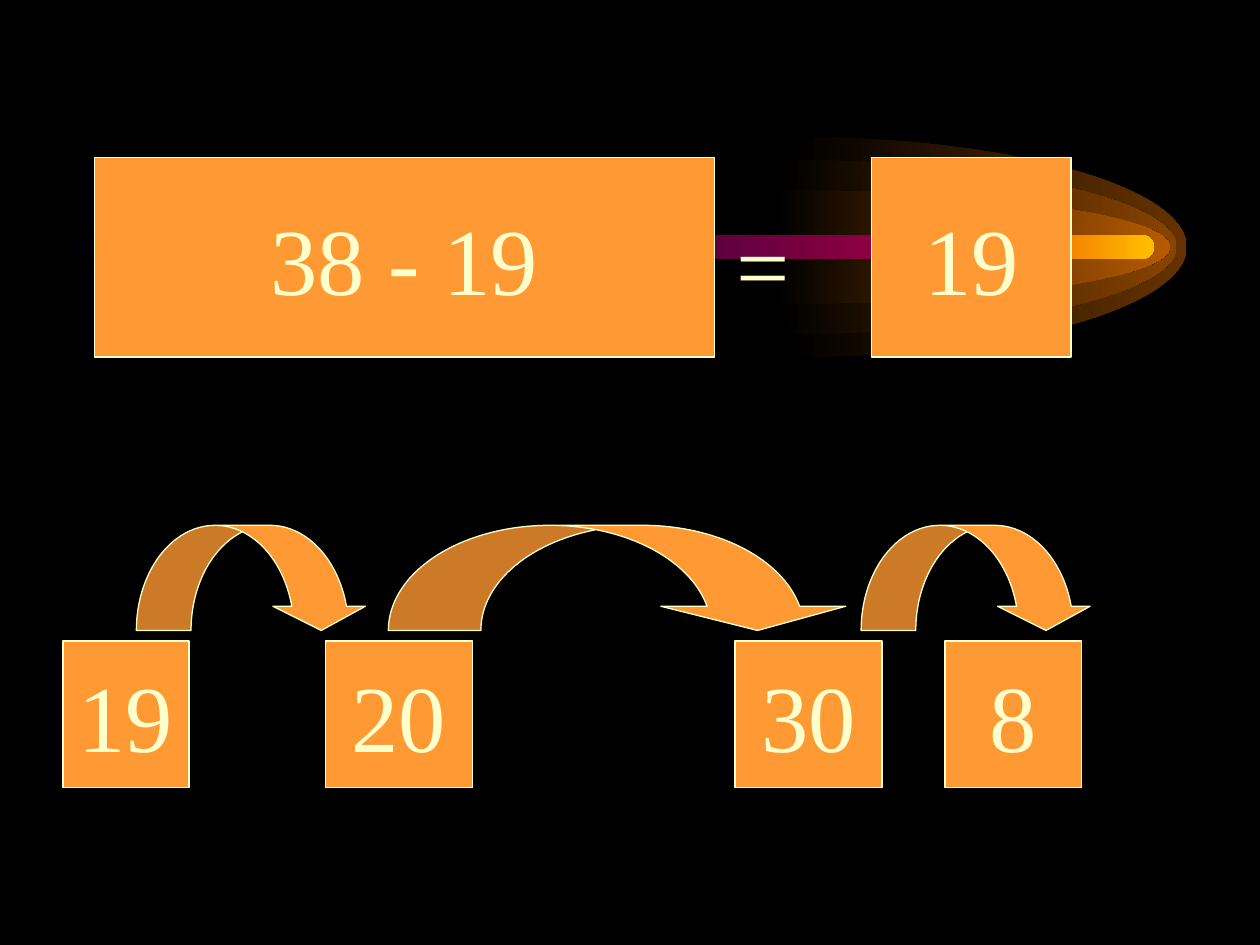
from lxml.etree import SubElement
from pptx import Presentation
from pptx.dml.color import RGBColor
from pptx.enum.shapes import MSO_SHAPE
from pptx.enum.text import MSO_ANCHOR, PP_ALIGN
from pptx.oxml.ns import qn
from pptx.util import Cm, Pt

BLACK = RGBColor(0x00, 0x00, 0x00)
ORANGE = RGBColor(0xFF, 0x99, 0x33)
CREAM = RGBColor(0xFF, 0xFF, 0xCC)
OUTER_GLOW = RGBColor(0x66, 0x33, 0x00)
MIDDLE_GLOW = RGBColor(0x89, 0x44, 0x00)
INNER_GLOW = RGBColor(0xB7, 0x5B, 0x00)
NAVY = RGBColor(0x00, 0x00, 0x40)
PURPLE = RGBColor(0x40, 0x00, 0x40)
CRIMSON = RGBColor(0x8F, 0x00, 0x40)
FLAME = RGBColor(0xF2, 0x73, 0x00)
AMBER = RGBColor(0xFF, 0xBF, 0x00)

FONT = "Times New Roman"
ROUNDNESS = 0.55


def fill_gradient(shape, stops):
    shape.shadow.inherit = False
    shape.line.fill.background()
    shape.fill.gradient()
    shape.fill.gradient_angle = 0
    stop_list = shape.element.spPr.find(qn("a:gradFill")).find(qn("a:gsLst"))
    for old_stop in list(stop_list):
        stop_list.remove(old_stop)
    for percent, color in stops:
        stop = SubElement(stop_list, qn("a:gs"), pos=str(percent * 1000))
        SubElement(stop, qn("a:srgbClr"), val=str(color))


def paint(shape):
    shape.shadow.inherit = False
    shape.fill.solid()
    shape.fill.fore_color.rgb = ORANGE
    shape.line.color.rgb = CREAM
    shape.line.width = Pt(0.75)


def write(shape, text, align):
    paragraph = shape.text_frame.paragraphs[0]
    paragraph.text = text
    paragraph.alignment = align
    font = paragraph.runs[0].font
    font.name = FONT
    font.size = Pt(54)
    font.color.rgb = CREAM


def add_number(slide, text, left, top, width, height):
    number = slide.shapes.add_shape(
        MSO_SHAPE.RECTANGLE, Cm(left), Cm(top), Cm(width), Cm(height))
    paint(number)
    number.text_frame.word_wrap = False
    number.text_frame.vertical_anchor = MSO_ANCHOR.MIDDLE
    write(number, text, PP_ALIGN.CENTER)


def add_jump(slide, left, top, width, height, shaft, head):
    jump = slide.shapes.add_shape(
        MSO_SHAPE.CURVED_DOWN_ARROW, Cm(left), Cm(top), Cm(width), Cm(height))
    paint(jump)
    for index, ratio in enumerate((shaft, head, 0.23)):
        jump.adjustments[index] = ratio


def bend_segments(outline):
    lines = list(outline.iter(qn("a:lnTo")))
    for start in range(0, len(lines), 3):
        curve = SubElement(outline, qn("a:cubicBezTo"))
        lines[start].addprevious(curve)
        for line in lines[start:start + 3]:
            curve.append(line[0])
            outline.remove(line)


def add_glow(slide, left, top, width, height, color):
    middle = top + height / 2
    half_arc = [(ROUNDNESS, -1), (1, -ROUNDNESS), (1, 0),
                (1, ROUNDNESS), (ROUNDNESS, 1), (0, 1)]
    builder = slide.shapes.build_freeform(Cm(left), Cm(top))
    builder.add_line_segments(
        [(Cm(left + x * width), Cm(middle + y * height / 2)) for x, y in half_arc],
        close=True)
    glow = builder.convert_to_shape()
    bend_segments(next(glow.element.iter(qn("a:path"))))
    fill_gradient(glow, [(0, BLACK), (100, color)])


def add_comet(slide, left, top, width, height):
    middle = top + height / 2
    for offset, glow_height, color in [(14.68, height, OUTER_GLOW),
                                       (14.48, 3.52, MIDDLE_GLOW),
                                       (14.35, 2.3, INNER_GLOW)]:
        add_glow(slide, left + offset, middle - glow_height / 2,
                 7.97, glow_height, color)

    thickness = 0.47
    core = slide.shapes.add_shape(
        MSO_SHAPE.ROUNDED_RECTANGLE, Cm(left), Cm(middle - thickness / 2),
        Cm(width), Cm(thickness))
    core.adjustments[0] = 0.5
    fill_gradient(core, [(0, BLACK), (20, NAVY), (50, PURPLE),
                         (75, CRIMSON), (90, FLAME), (100, AMBER)])


def add_equation(slide, left, top, width, height):
    add_number(slide, "38 - 19", left, top, 12.5, height)
    add_number(slide, "19", left + width - height, top, height, height)
    equals = slide.shapes.add_textbox(
        Cm(left + 12.7), Cm(top + 0.84), Cm(2.54), Cm(2.54))
    equals.text_frame.word_wrap = True
    write(equals, "=", PP_ALIGN.LEFT)


def add_number_line(slide, left, top, height):
    number_height = 2.96
    for offset, width, shaft, head in [(1.48, 4.66, 0.52, 0.88),
                                       (6.56, 9.31, 0.88, 1.76),
                                       (16.09, 4.66, 0.52, 0.88)]:
        add_jump(slide, left + offset, top, width, 2.12, shaft, head)
    for text, offset, width in [("19", 0, 2.54), ("20", 5.29, 2.96),
                                ("30", 13.55, 2.96), ("8", 17.78, 2.75)]:
        add_number(slide, text, left + offset, top + height - number_height,
                   width, number_height)


def main():
    presentation = Presentation()
    presentation.slide_width = Cm(25.4)
    presentation.slide_height = Cm(19.05)
    slide = presentation.slides.add_slide(presentation.slide_layouts[6])
    slide.background.fill.solid()
    slide.background.fill.fore_color.rgb = BLACK
    add_comet(slide, 1.27, 2.76, 22, 4.44)
    add_equation(slide, 1.9, 3.18, 19.69, 4.02)
    add_number_line(slide, 1.27, 10.59, 5.29)
    presentation.save("out.pptx")


if __name__ == "__main__":
    main()
